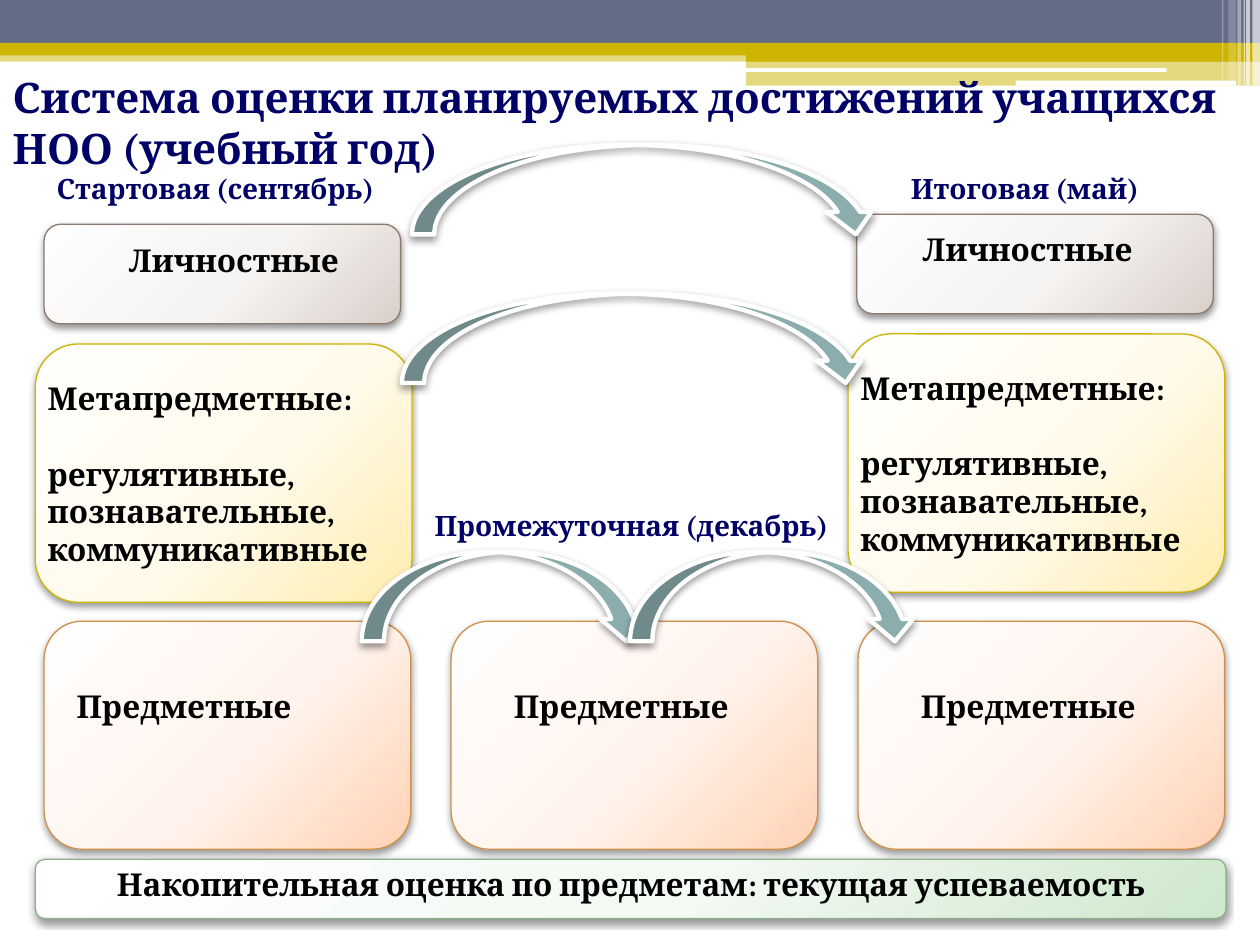
from dataclasses import dataclass

from lxml.etree import SubElement
from pptx import Presentation
from pptx.dml.color import RGBColor
from pptx.enum.shapes import MSO_SHAPE as Shape
from pptx.enum.text import MSO_ANCHOR as Anchor, MSO_AUTO_SIZE as AutoSize, PP_ALIGN as Align
from pptx.oxml import parse_xml
from pptx.oxml.ns import nsdecls, qn
from pptx.util import Inches, Pt


@dataclass(frozen=True)
class Theme:
    font: str = "Cambria"
    title_size: int = 24
    body_size: int = 18
    period_size: int = 16
    navy: str = "000066"
    black: str = "000000"
    white: str = "FFFFFF"
    slate: str = "646B86"
    gold: str = "CCB400"
    arrow: str = "8CADAE"
    # Panel colours: three gradient stops, then the outline
    personal: tuple = ("FEFEFE", "F6F4F2", "DAD0CA", "8C7B70")
    meta: tuple = ("FFFFFD", "FFFAEC", "FFEDAF", "CCB400")
    subject: tuple = ("FFFEFE", "FFF4ED", "FFD2B5", "D19049")
    summary: tuple = ("FEFFFE", "F3F9F3", "CFE8CD", "8FB08C")


THEME = Theme()


def add_shape(slide, kind, box):
    shape = slide.shapes.add_shape(kind, *map(Inches, box))
    shape.shadow.inherit = False
    return shape


def set_color(fill, color):
    fill.solid()
    fill.fore_color.rgb = RGBColor.from_string(color)


def set_outline(shape, color, width):
    set_color(shape.line.fill, color)
    shape.line.width = Pt(width)


def add_shadow(shape):
    effects = shape._element.spPr.find(qn("a:effectLst"))
    shadow = SubElement(effects, qn("a:outerShdw"), blurRad=str(Pt(4.1)), dist=str(Pt(2)),
                        dir="5400000", rotWithShape="0")
    black = SubElement(shadow, qn("a:srgbClr"), val=THEME.black)
    SubElement(black, qn("a:alpha"), val="40000")


def add_bar(slide, box, color, opacity=100, kind=Shape.RECTANGLE):
    bar = add_shape(slide, kind, box)
    set_color(bar.fill, color)
    bar.line.fill.background()
    if opacity < 100:
        tint = bar._element.spPr.find(qn("a:solidFill"))[0]
        SubElement(tint, qn("a:alpha"), val=str(opacity * 1000))


def add_panel(slide, box, colors):
    """Rounded panel shaded radially from beyond its upper left corner."""
    *stops, outline = colors
    panel = add_shape(slide, Shape.ROUNDED_RECTANGLE, box)
    set_outline(panel, outline, 0.75)
    stop_xml = "".join(f'<a:gs pos="{pos}000"><a:srgbClr val="{color}"/></a:gs>'
                       for pos, color in zip((0, 55, 100), stops))
    gradient = parse_xml(
        f'<a:gradFill {nsdecls("a")} rotWithShape="1"><a:gsLst>{stop_xml}</a:gsLst>'
        '<a:path path="circle"><a:fillToRect l="-40000" t="-90000" r="140000" b="190000"/>'
        '</a:path></a:gradFill>')
    panel._element.spPr.find(qn("a:prstGeom")).addnext(gradient)
    add_shadow(panel)


def write(frame, lines, size, color, align=Align.LEFT, gap=0, wrap=True):
    frame.word_wrap = wrap
    frame.auto_size = AutoSize.SHAPE_TO_FIT_TEXT
    frame.vertical_anchor = Anchor.TOP
    frame.text = "\n".join(lines)
    for index, paragraph in enumerate(frame.paragraphs):
        paragraph.alignment = align
        paragraph.space_before = Pt(gap if index else 0)
        font = paragraph.font
        font.name, font.size, font.bold = THEME.font, Pt(size), True
        font.color.rgb = RGBColor.from_string(color)


def add_label(slide, box, *lines, size=THEME.body_size, color=THEME.black, **layout):
    label = slide.shapes.add_textbox(*map(Inches, box))
    write(label.text_frame, lines, size, color, **layout)


def add_period(slide, box, text, wrap=True):
    add_label(slide, box, text, size=THEME.period_size, color=THEME.navy, wrap=wrap)


def draw_header(slide, width):
    half = 5.92
    add_bar(slide, (0, 0.4, width, 0.09), THEME.gold, 50)
    add_bar(slide, (0, 0, width, 0.34), THEME.slate)
    add_bar(slide, (0, 0.34, width, 0.1), THEME.gold)
    add_bar(slide, (half, 0.39, width - half, 0.1), THEME.gold)
    add_bar(slide, (half, 0.48, width - half, 0.2), THEME.gold, 50)
    for box in ((5.91, 0.54, 3.35, 0.03), (8.06, 0.64, 1.75, 0.04)):
        add_bar(slide, box, THEME.white, kind=Shape.ROUNDED_RECTANGLE)
    # Translucent stripes in the corner: left, width, height, opacity
    for left, thick, height, opacity in (
            (9.94, 0.06, 0.68, 65), (9.89, 0.03, 0.68, 65), (9.87, 0.01, 0.68, 60),
            (9.82, 0.03, 0.68, 40), (9.75, 0.06, 0.64, 20), (9.7, 0.01, 0.64, 30)):
        add_bar(slide, (left, 0, thick, height), THEME.white, opacity)


def draw_title(slide, box):
    title = slide.shapes.title
    title.left, title.top, title.width, title.height = map(Inches, box)
    write(title.text_frame, ["Система оценки планируемых достижений учащихся НОО (учебный год)"],
          THEME.title_size, THEME.navy)
    slide.shapes._spTree.append(title._element)  # in front of the header bars


def draw_results(slide, left, top, personal_indent):
    """Personal results above meta-subject results."""
    add_panel(slide, (left, top + 0.95, 2.99, 2.05), THEME.meta)
    add_panel(slide, (left + 0.07, top, 2.83, 0.79), THEME.personal)
    add_label(slide, (left + personal_indent, top + 0.08, 2.91, 0.71), "Личностные ",
              align=Align.CENTER)
    add_label(slide, (left, top + 1.18, 3.07, 1.62), "Метапредметные:",
              "регулятивные, познавательные, коммуникативные", gap=21.5)


def draw_subjects(slide, left, top, step):
    for column, indent in enumerate((0.16, 0.4, 0.4)):
        x = left + column * step
        add_panel(slide, (x, top, 2.91, 1.81), THEME.subject)
        add_label(slide, (x + indent, top + 0.47, 2.36, 0.4), "Предметные")


def draw_arrows(slide, height):
    for left, top, width in ((3.27, 1.15, 3.7), (3.19, 2.33, 3.7),
                             (2.87, 4.38, 2.28), (5, 4.38, 2.28)):
        arrow = add_shape(slide, Shape.CURVED_DOWN_ARROW, (left, top, width, height))
        set_color(arrow.fill, THEME.arrow)
        set_outline(arrow, THEME.white, 2.5)
        add_shadow(arrow)


def draw_summary(slide, left, top):
    add_panel(slide, (left, top, 9.45, 0.47), THEME.summary)
    add_label(slide, (left + 0.55, top, 8.66, 0.4),
              "Накопительная оценка по предметам: текущая успеваемость")


def main():
    deck = Presentation()
    deck.slide_width, deck.slide_height = Inches(10), Inches(7.5)
    slide = deck.slides.add_slide(deck.slide_layouts[5])

    draw_header(slide, 10)
    draw_title(slide, (0, 0.52, 10, 0.91))
    # Assessment stages through the year
    draw_subjects(slide, 0.35, 4.93, step=3.23)
    draw_results(slide, 0.28, 1.78, personal_indent=0.15)
    draw_results(slide, 6.73, 1.7, personal_indent=0)
    draw_arrows(slide, 0.71)
    add_period(slide, (0.35, 1.31, 3.15, 0.37), "Стартовая (сентябрь)")
    add_period(slide, (3.35, 3.99, 3.39, 0.37), "Промежуточная (декабрь)")
    add_period(slide, (7.13, 1.31, 2.08, 0.37), "Итоговая (май)", wrap=False)
    draw_summary(slide, 0.28, 6.82)

    deck.save("out.pptx")


if __name__ == "__main__":
    main()
